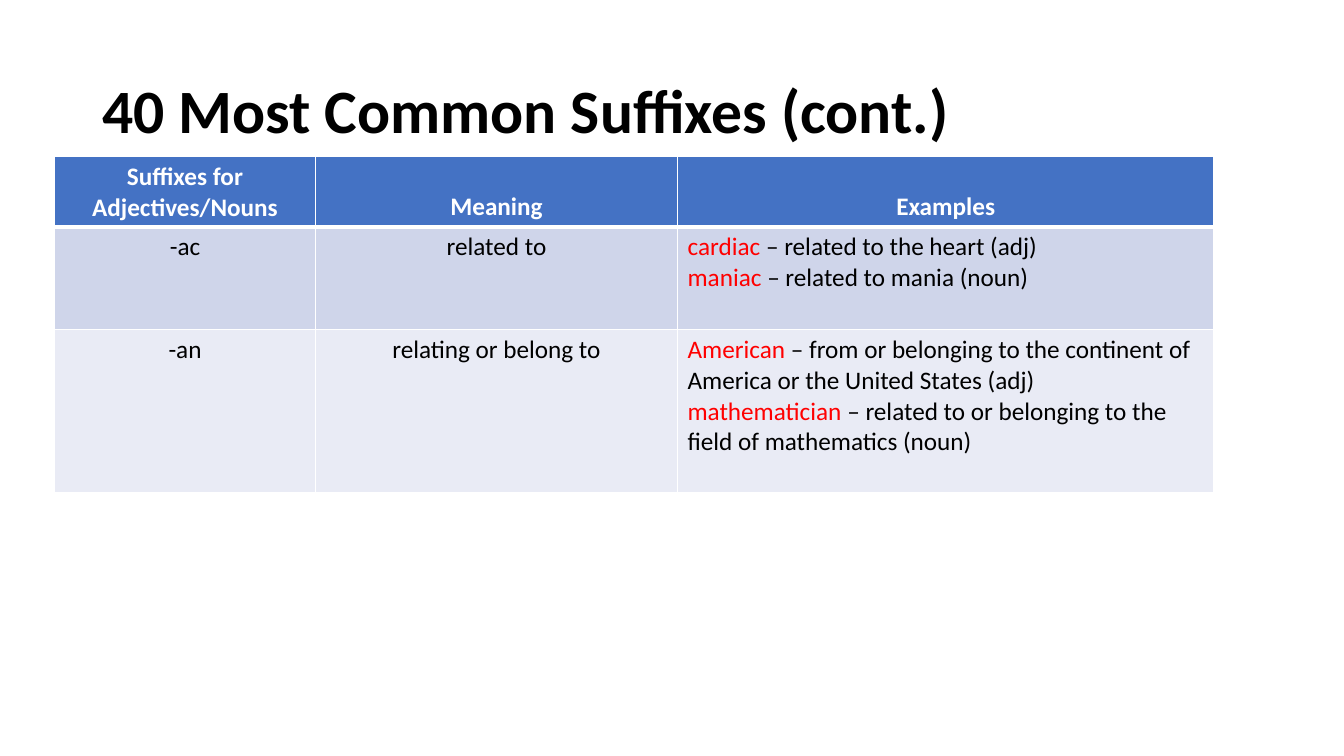
from dataclasses import dataclass

from lxml import etree
from pptx import Presentation
from pptx.dml.color import RGBColor
from pptx.enum.text import MSO_ANCHOR, PP_ALIGN
from pptx.oxml.ns import qn
from pptx.util import Inches, Pt

LEFT, CENTER = PP_ALIGN.LEFT, PP_ALIGN.CENTER
TOP, MIDDLE, BOTTOM = MSO_ANCHOR.TOP, MSO_ANCHOR.MIDDLE, MSO_ANCHOR.BOTTOM

TITLE = "40 Most Common Suffixes (cont.)"
HEADERS = ["Suffixes for Adjectives/Nouns", "Meaning", "Examples"]
SUFFIXES = [
    ("-ac", "related to", [
        ("cardiac ", "– related to the heart (adj)"),
        ("maniac ", "– related to mania (noun)"),
    ]),
    ("-an", "relating or belong to", [
        ("American ", "– from or belonging to the continent of America or the United States (adj)"),
        ("mathematician ", "– related to or belonging to the field of mathematics (noun)"),
    ]),
]
COLUMN_WIDTHS = [2.59, 3.59, 5.32]
ROW_HEIGHTS = [0.7, 1.02, 1.62]


@dataclass(frozen=True)
class Theme:
    font: str = "Calibri"
    title_size: int = 44
    table_size: int = 18
    text: str = "000000"
    accent: str = "FF0000"
    header_text: str = "FFFFFF"
    header_fill: str = "4472C4"
    row_fills: tuple = ("CFD5EA", "E9EBF5")
    border: str = "FFFFFF"
    thin: int = 1
    thick: int = 3


class SlideBuilder:
    def __init__(self, slide, theme):
        self.slide = slide
        self.theme = theme

    def style(self, paragraph, size, color, bold=False, align=LEFT):
        paragraph.alignment = align
        font = paragraph.font
        font.name = self.theme.font
        font.size = Pt(size)
        font.bold = bold
        font.color.rgb = RGBColor.from_string(color)

    def title(self, text, left, top, width, height):
        box = self.slide.shapes.add_textbox(Inches(left), Inches(top), Inches(width), Inches(height))
        frame = box.text_frame
        frame.word_wrap = True
        frame.vertical_anchor = MIDDLE
        paragraph = frame.paragraphs[0]
        paragraph.text = text
        paragraph.line_spacing = 0.9
        self.style(paragraph, self.theme.title_size, self.theme.text, bold=True)

    def table(self, left, top, column_widths, row_heights):
        table = self.slide.shapes.add_table(
            len(row_heights), len(column_widths), Inches(left), Inches(top),
            Inches(sum(column_widths)), Inches(sum(row_heights))).table
        for column, width in zip(table.columns, column_widths):
            column.width = Inches(width)
        for row, height in zip(table.rows, row_heights):
            row.height = Inches(height)
        return table

    def cell(self, cell, fill, anchor=TOP, bottom=None):
        properties = cell._tc.get_or_add_tcPr()
        thin = self.theme.thin
        for side, width in (("L", thin), ("R", thin), ("T", thin), ("B", bottom or thin)):
            line = etree.SubElement(properties, qn(f"a:ln{side}"), w=str(Pt(width)))
            solid = etree.SubElement(line, qn("a:solidFill"))
            etree.SubElement(solid, qn("a:srgbClr"), val=self.theme.border)
        cell.fill.solid()
        cell.fill.fore_color.rgb = RGBColor.from_string(fill)
        cell.vertical_anchor = anchor

    def header_cell(self, cell, text):
        self.cell(cell, self.theme.header_fill, BOTTOM, self.theme.thick)
        cell.text = text
        self.style(cell.text_frame.paragraphs[0], self.theme.table_size,
                   self.theme.header_text, bold=True, align=CENTER)

    def label_cell(self, cell, text, fill):
        self.cell(cell, fill)
        cell.text = text
        self.style(cell.text_frame.paragraphs[0], self.theme.table_size,
                   self.theme.text, align=CENTER)

    def example_cell(self, cell, examples, fill):
        self.cell(cell, fill)
        frame = cell.text_frame
        for index, (word, meaning) in enumerate(examples):
            paragraph = frame.add_paragraph() if index else frame.paragraphs[0]
            self.style(paragraph, self.theme.table_size, self.theme.text)
            for text, color in ((word, self.theme.accent), (meaning, self.theme.text)):
                span = paragraph.add_run()
                span.text = text
                span.font.color.rgb = RGBColor.from_string(color)


def main():
    deck = Presentation()
    deck.slide_width, deck.slide_height = Inches(13.33), Inches(7.5)
    theme = Theme()
    page = SlideBuilder(deck.slides.add_slide(deck.slide_layouts[6]), theme)

    page.title(TITLE, 0.92, 0.4, 11.5, 1.45)
    table = page.table(0.54, 1.55, COLUMN_WIDTHS, ROW_HEIGHTS)
    for column, header in enumerate(HEADERS):
        page.header_cell(table.cell(0, column), header)
    for row, ((suffix, meaning, examples), fill) in enumerate(zip(SUFFIXES, theme.row_fills), 1):
        page.label_cell(table.cell(row, 0), suffix, fill)
        page.label_cell(table.cell(row, 1), meaning, fill)
        page.example_cell(table.cell(row, 2), examples, fill)

    deck.save("out.pptx")


if __name__ == "__main__":
    main()
